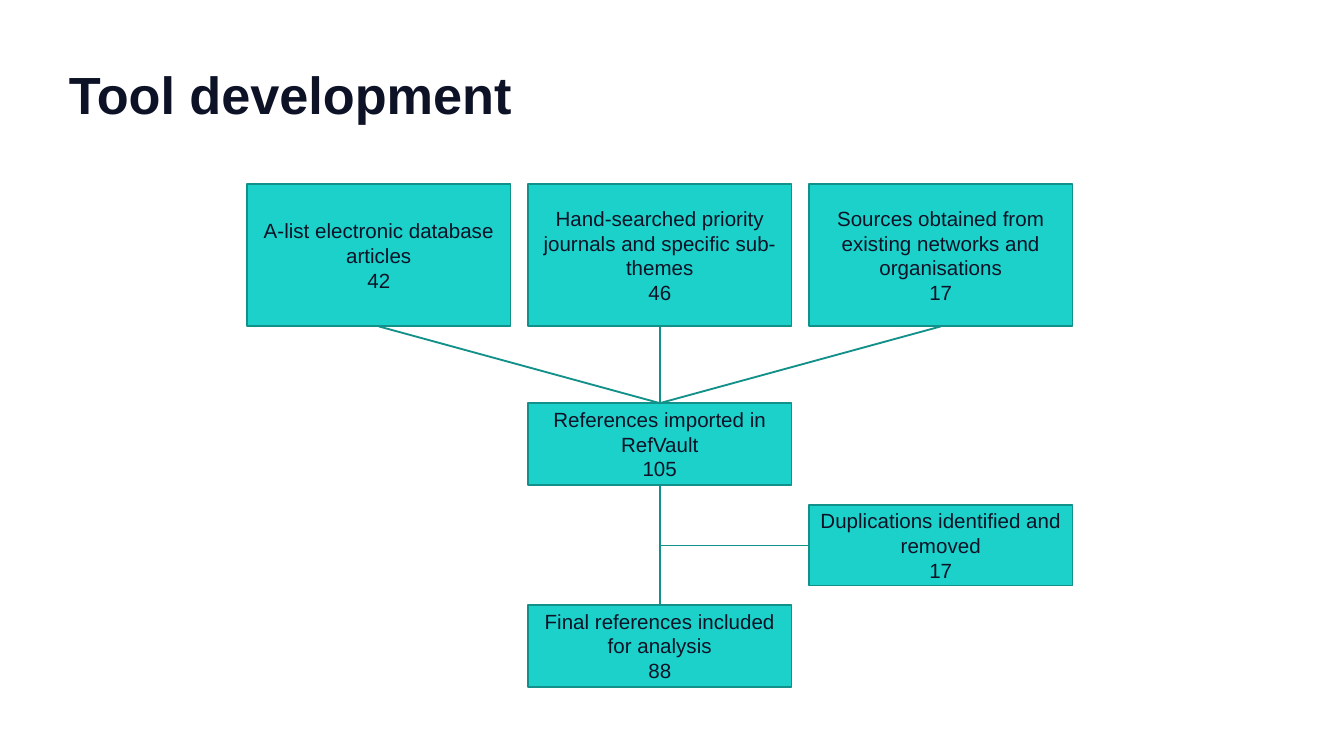
from pptx import Presentation
from pptx.dml.color import RGBColor
from pptx.enum.shapes import MSO_CONNECTOR as Connector, MSO_SHAPE as Shape
from pptx.enum.text import MSO_ANCHOR as Anchor, MSO_AUTO_SIZE as AutoSize, PP_ALIGN as Align
from pptx.oxml.ns import qn
from pptx.util import Cm, Pt
from lxml import etree

INK, TEAL, EDGE = "0D1226", "1BD1CA", "12908A"
LEFT, STEP, WIDTH = 4.67, 5.31, 4.98
TOP, LEFT_SIDE, BOTTOM = 0, 1, 2


def color(hex_string):
    return RGBColor.from_string(hex_string)


def style_text(frame, size, align, anchor, inset, bold=False):
    frame.word_wrap = True
    frame.auto_size = AutoSize.NONE
    frame.vertical_anchor = anchor
    frame.margin_left = frame.margin_right = Cm(inset)
    frame.margin_top = frame.margin_bottom = Cm(inset)
    for paragraph in frame.paragraphs:
        paragraph.alignment = align
        for run in paragraph.runs:
            run.font.name = "Arial"
            run.font.size = Pt(size)
            run.font.bold = bold
            run.font.color.rgb = color(INK)


prs = Presentation()
prs.slide_width, prs.slide_height = Cm(25.4), Cm(14.29)
slide = prs.slides.add_slide(prs.slide_layouts[5])

title = slide.shapes.title
title.left, title.top, title.width, title.height = Cm(1.3), Cm(1.09), Cm(22.33), Cm(2.11)
title.text_frame.text = "Tool development"
style_text(title.text_frame, 28, Align.LEFT, Anchor.TOP, 0, bold=True)
title.text_frame.margin_top = Cm(0.08)

stages = [
    ("database", 0, 3.48, 2.69, "A-list electronic database articles", 42),
    ("journals", 1, 3.48, 2.69, "Hand-searched priority journals and specific sub-themes", 46),
    ("networks", 2, 3.48, 2.69, "Sources obtained from existing networks and organisations", 17),
    ("imported", 1, 7.62, 1.55, "References imported in RefVault", 105),
    ("final", 1, 11.43, 1.55, "Final references included for analysis", 88),
    ("duplicates", 2, 9.55, 1.52, "Duplications identified and removed", 17),
]
boxes = {}
for stage, column, top, height, label, count in stages:
    box = slide.shapes.add_shape(
        Shape.RECTANGLE, Cm(LEFT + column * STEP), Cm(top), Cm(WIDTH), Cm(height))
    box.shadow.inherit = False
    box.fill.solid()
    box.fill.fore_color.rgb = color(TEAL)
    box.line.color.rgb = color(EDGE)
    box.line.width = Pt(1)
    box.text_frame.text = f"{label}\n{count}"
    style_text(box.text_frame, 11, Align.CENTER, Anchor.MIDDLE, 0.1)
    boxes[stage] = box

flows = [
    ("database", BOTTOM, "imported"),
    ("journals", BOTTOM, "imported"),
    ("networks", BOTTOM, "imported"),
    ("imported", BOTTOM, "final"),
    ("duplicates", LEFT_SIDE, None),
]
trunk_x, removal_y = Cm(LEFT + STEP + WIDTH / 2), Cm(10.31)
for source, side, target in flows:
    flow = slide.shapes.add_connector(
        Connector.STRAIGHT, trunk_x, removal_y, trunk_x, removal_y)
    flow.begin_connect(boxes[source], side)
    if target:
        flow.end_connect(boxes[target], TOP)
    flow.line.color.rgb = color(EDGE)
    flow.line.width = Pt(1)
    etree.SubElement(flow._element.spPr, qn("a:effectLst"))

prs.save("out.pptx")
